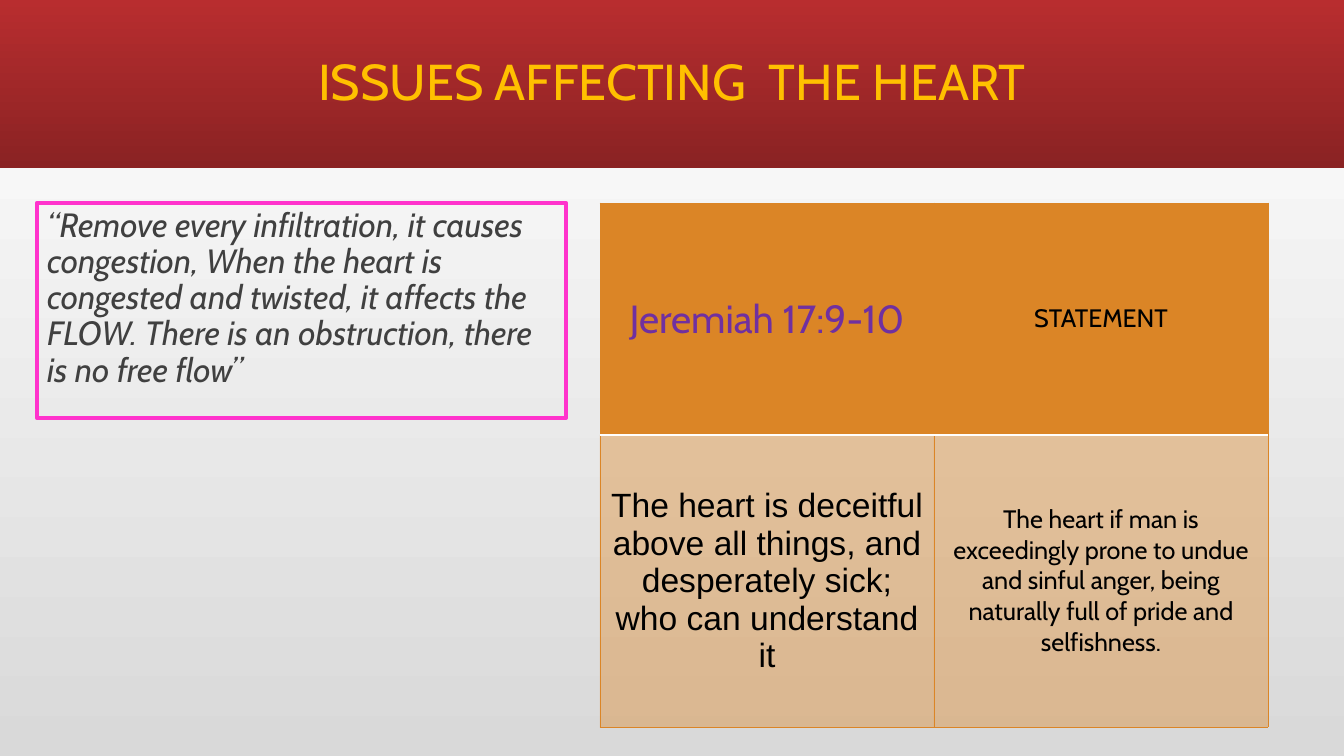
from lxml import etree
from pptx import Presentation
from pptx.dml.color import RGBColor
from pptx.enum.shapes import MSO_SHAPE
from pptx.enum.text import MSO_ANCHOR, MSO_AUTO_SIZE, PP_ALIGN
from pptx.oxml.ns import qn
from pptx.util import Pt

EMU_PER_PX = 914400 / 100.8
RECTANGLE = MSO_SHAPE.RECTANGLE
TOP, MIDDLE = MSO_ANCHOR.TOP, MSO_ANCHOR.MIDDLE
NO_AUTOFIT = MSO_AUTO_SIZE.NONE
LEFT, CENTER = PP_ALIGN.LEFT, PP_ALIGN.CENTER
ORANGE, BLACK, WHITE = "DB8526", "000000", "FFFFFF"

VERSE = "The heart is deceitful above all things, and desperately sick; who can understand it"
STATEMENT = ("The heart if man is exceedingly prone to undue and sinful anger, "
             "being naturally full of pride and selfishness.")
QUOTE = ("“Remove every infiltration, it causes congestion, When the heart is congested "
         "and twisted, it affects the FLOW. There is an obstruction, there is no free flow”")


def px(length):
    """Turn a length in px into EMU."""
    return round(length * EMU_PER_PX)


def rgb(code):
    """Turn a hex string into a colour."""
    return RGBColor.from_string(code)


def place(part, box):
    """Move and size a part to a box of left, top, width, height in px."""
    part.left, part.top, part.width, part.height = map(px, box)


def paint_gradient(fill, first, last, angle):
    """Give a fill a two-colour linear gradient."""
    fill.gradient()
    fill.gradient_angle = angle
    for stop, code in zip(fill.gradient_stops, (first, last)):
        stop.color.rgb = rgb(code)


def write(frame, text, size, color=BLACK, font="Cabin", align=CENTER, italic=False,
          line_spacing=None, space_before=0):
    """Write one formatted paragraph into a text frame."""
    frame.word_wrap = True
    paragraph = frame.paragraphs[0]
    paragraph.alignment = align
    paragraph.line_spacing = line_spacing
    paragraph.space_before = Pt(space_before)
    run = paragraph.add_run()
    run.text = text
    run.font.size, run.font.name, run.font.italic = Pt(size), font, italic
    run.font.color.rgb = rgb(color)
    return paragraph


def add_heading(slide, box):
    """Place the red band and the title centred on it."""
    left, top, width, height = box
    band = slide.shapes.add_shape(RECTANGLE, *map(px, box))
    band.shadow.inherit = False
    band.line.fill.background()
    paint_gradient(band.fill, "B82D2F", "8A2223", 270)
    band._element.getparent().insert(2, band._element)

    title = slide.shapes.title
    place(title, (left + 118, top + 11, width - 236, height - 22))
    title.text_frame.auto_size = NO_AUTOFIT
    title.text_frame.vertical_anchor = MIDDLE
    write(title.text_frame, "ISSUES AFFECTING  THE HEART", 36, "FFC000", line_spacing=0.9)


def add_quote(slide, box):
    """Place the outlined quotation in the body placeholder."""
    quote = slide.placeholders[1]
    place(quote, box)
    quote.line.color.rgb = rgb("FF33CC")
    quote.line.width = Pt(3)
    quote.text_frame.auto_size = NO_AUTOFIT
    quote.text_frame.vertical_anchor = TOP
    paragraph = write(quote.text_frame, QUOTE, 24, "404040", align=LEFT, italic=True,
                      line_spacing=0.9, space_before=18)
    properties = paragraph._p.get_or_add_pPr()
    properties.set("marL", "0")
    properties.set("indent", "0")
    etree.SubElement(properties, qn("a:buNone"))


def add_border(cell, side, color, width):
    """Draw one side of a cell's border."""
    border = etree.SubElement(cell._tc.get_or_add_tcPr(), qn(f"a:ln{side}"), w=str(Pt(width)))
    solid = etree.SubElement(border, qn("a:solidFill"))
    etree.SubElement(solid, qn("a:srgbClr"), val=color)


def add_scripture_table(slide, box):
    """Place the table that sets the verse beside the statement."""
    height = box[3]
    header_height = 232
    rows = [
        [("Jeremiah 17:9-10", {"size": 28, "color": "7030A0"}), ("STATEMENT", {"size": 18})],
        [(VERSE, {"size": 24, "font": "Arial"}), (STATEMENT, {"size": 18})],
    ]
    table = slide.shapes.add_table(2, 2, *map(px, box)).table
    table.first_row = table.horz_banding = False
    for row, row_height in zip(table.rows, (header_height, height - header_height)):
        row.height = px(row_height)
    for row_index, contents in enumerate(rows):
        for column_index, (text, style) in enumerate(contents):
            cell = table.cell(row_index, column_index)
            cell.vertical_anchor = MIDDLE
            write(cell.text_frame, text, **style)
            divider = {"B": (WHITE, 1)} if row_index == 0 else {"T": (WHITE, 1)}
            for side in "LRTB":
                add_border(cell, side, *divider.get(side, (ORANGE, 0.5)))
            cell.fill.solid()
            cell.fill.fore_color.rgb = rgb(ORANGE)
            if row_index:
                tint = cell._tc.tcPr.find(qn("a:solidFill")).find(qn("a:srgbClr"))
                etree.SubElement(tint, qn("a:alpha"), val="40000")


def main():
    """Build the slide and save it."""
    presentation = Presentation()
    presentation.slide_width, presentation.slide_height = px(1344), px(756)
    slide = presentation.slides.add_slide(presentation.slide_layouts[1])
    paint_gradient(slide.background.fill, "D9D9D9", WHITE, 90)
    add_heading(slide, (0, 0, 1344, 168))
    add_quote(slide, (37, 203, 529, 215))
    add_scripture_table(slide, (600, 203, 668, 524))
    presentation.save("out.pptx")


if __name__ == "__main__":
    main()
